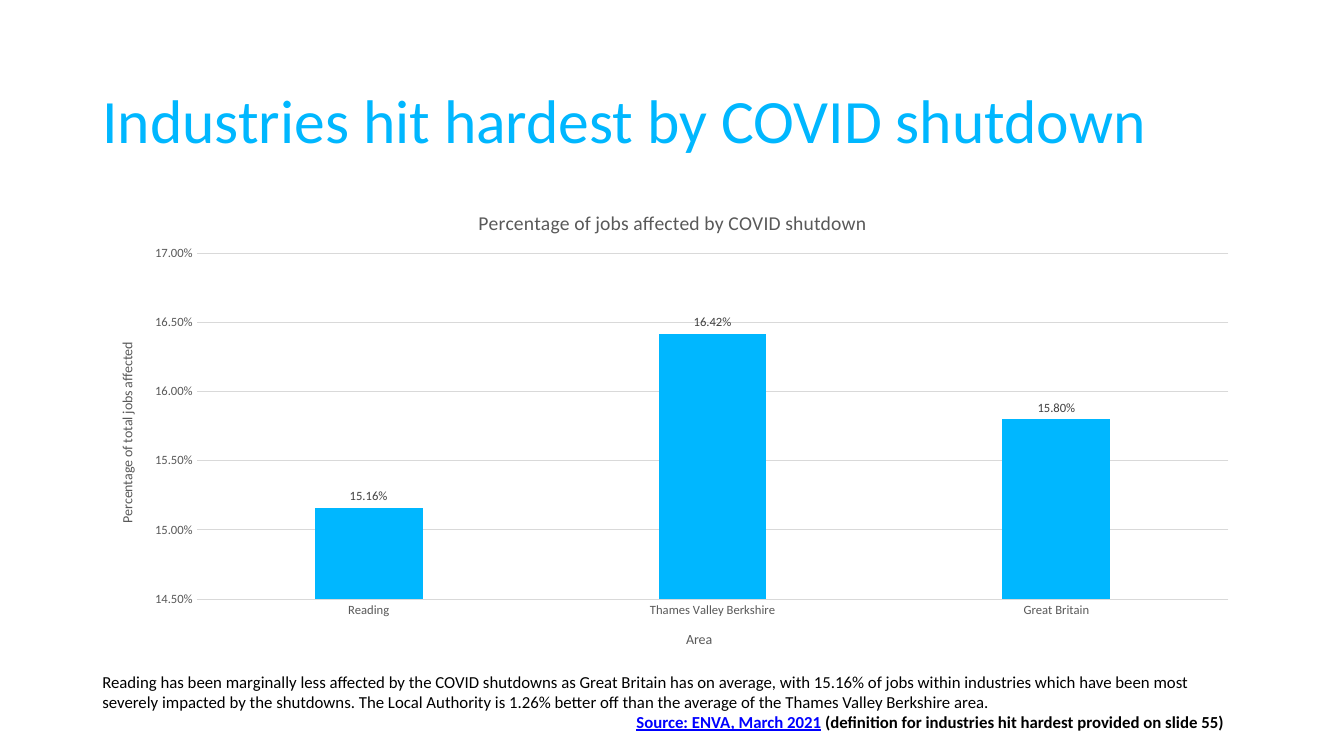
from pptx import Presentation
from pptx.chart.data import CategoryChartData
from pptx.dml.color import RGBColor
from pptx.enum.chart import XL_CHART_TYPE, XL_LABEL_POSITION, XL_TICK_MARK
from pptx.enum.text import MSO_ANCHOR, MSO_AUTO_SIZE, PP_ALIGN
from pptx.oxml import parse_xml
from pptx.oxml.ns import nsdecls, qn
from pptx.util import Pt

FONT = "Calibri"
CYAN = RGBColor(0x00, 0xB7, 0xFF)
BLACK = RGBColor(0x00, 0x00, 0x00)
BLUE = RGBColor(0x00, 0x00, 0xFF)
GREY = RGBColor(0x59, 0x59, 0x59)
DARK = RGBColor(0x40, 0x40, 0x40)
PALE = RGBColor(0xD9, 0xD9, 0xD9)
LEFT, WIDTH = Pt(66), Pt(828)


def style(font, size, color, bold=False):
    font.name = FONT
    font.size = Pt(size)
    font.bold = bold
    font.color.rgb = color


def place(node, index, **spots):
    for old in node.findall(qn("c:layout")):
        node.remove(old)
    target = '<c:layoutTarget val="inner"/>' if "w" in spots else ""
    modes = "".join(f'<c:{key}Mode val="edge"/>' for key in "xy")
    sizes = "".join(f'<c:{key} val="{val}"/>' for key, val in spots.items())
    node.insert(index, parse_xml(
        f'<c:layout {nsdecls("c")}><c:manualLayout>{target}{modes}{sizes}'
        "</c:manualLayout></c:layout>"))


deck = Presentation()
deck.slide_width, deck.slide_height = Pt(960), Pt(540)
slide = deck.slides.add_slide(deck.slide_layouts[5])

title = slide.shapes.title
title.left, title.top, title.width, title.height = LEFT, Pt(44), WIDTH, Pt(89)
frame = title.text_frame
frame.text = "Industries hit hardest by COVID shutdown"
frame.vertical_anchor = MSO_ANCHOR.MIDDLE
frame.auto_size = MSO_AUTO_SIZE.NONE
head = frame.paragraphs[0]
head.alignment = PP_ALIGN.LEFT
head.line_spacing = 0.9
style(head.runs[0].font, 44, CYAN)

data = CategoryChartData(number_format="0.00%")
data.categories = ["Reading", "Thames Valley Berkshire", "Great Britain"]
data.add_series("Series 1", [0.1516, 0.1642, 0.158])
chart = slide.shapes.add_chart(
    XL_CHART_TYPE.COLUMN_CLUSTERED, LEFT, Pt(133), WIDTH, Pt(343), data).chart
style(chart.font, 10, BLACK)
chart.has_legend = False
place(chart._chartSpace.chart.plotArea, 0, x=0.09, y=0.14, w=0.89, h=0.72)

area, share = chart.category_axis, chart.value_axis
for owner, text, size, x, y in [
    (chart, "Percentage of jobs affected by COVID shutdown", 14, 0.33, 0.04),
    (area, "Area", 10, 0.51, 0.92),
    (share, "Percentage of total jobs affected", 10, 0.02, 0.32),
]:
    label = owner.chart_title if owner is chart else owner.axis_title
    label.text_frame.text = text
    style(label.text_frame.paragraphs[0].runs[0].font, size, GREY)
    place(label._element, 1, x=x, y=y)

for axis in (area, share):
    axis.major_tick_mark = axis.minor_tick_mark = XL_TICK_MARK.NONE
    style(axis.tick_labels.font, 9, GREY)
area.format.line.color.rgb = PALE
area.format.line.width = Pt(0.75)
share.format.line.fill.background()
share.minimum_scale, share.maximum_scale, share.major_unit = 0.145, 0.17, 0.005
share.tick_labels.number_format = "0.00%"
share.tick_labels.number_format_is_linked = False
share.has_major_gridlines = True
share.major_gridlines.format.line.color.rgb = PALE
share.major_gridlines.format.line.width = Pt(0.75)

plot = chart.plots[0]
plot.gap_width, plot.overlap = 219, -27
plot.vary_by_categories = False
bars = plot.series[0]
bars.format.fill.solid()
bars.format.fill.fore_color.rgb = CYAN
tags = bars.data_labels
tags.show_value = True
tags.position = XL_LABEL_POSITION.OUTSIDE_END
tags.number_format = "0.00%"
tags.number_format_is_linked = False
style(tags.font, 9, DARK)

note = slide.shapes.add_textbox(LEFT, Pt(476), WIDTH, Pt(51)).text_frame
note.word_wrap = True
note.text = (
    "Reading has been marginally less affected by the COVID shutdowns as Great "
    "Britain has on average, with 15.16% of jobs within industries which have "
    "been most severely impacted by the shutdowns. The Local Authority is 1.26% "
    "better off than the average of the Thames Valley Berkshire area.")
style(note.paragraphs[0].runs[0].font, 12, BLACK)
source = note.add_paragraph()
source._p.get_or_add_pPr().set("marL", str(Pt(381.5)))
for text, color in [
    ("Source: ENVA, March 2021", BLUE),
    (" (definition for industries hit hardest provided on slide 55)", BLACK),
]:
    run = source.add_run()
    run.text = text
    style(run.font, 12, color, True)
    run.font.underline = color == BLUE

deck.save("out.pptx")
